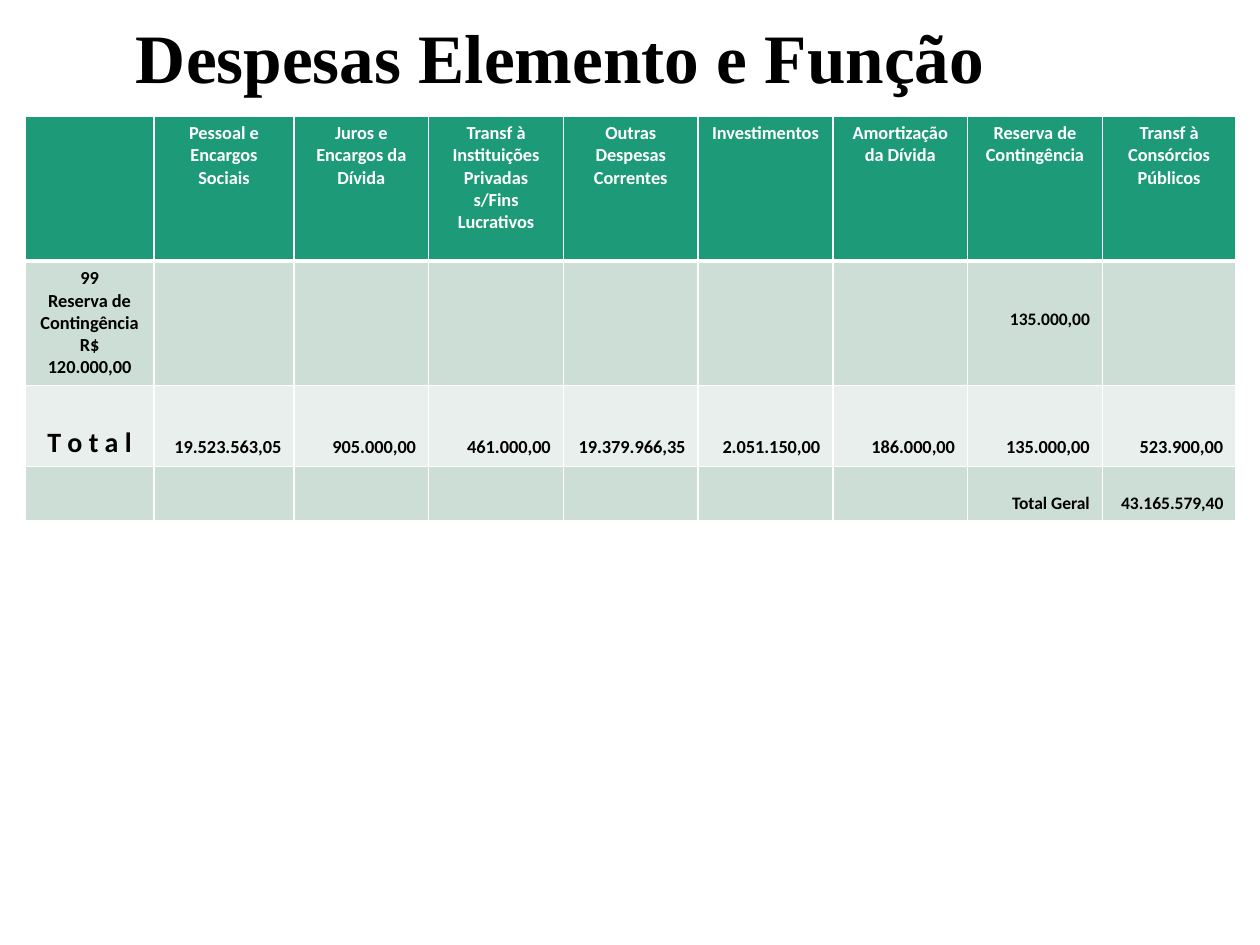
from dataclasses import dataclass

from lxml.etree import SubElement as Sub
from pptx import Presentation
from pptx.dml.color import RGBColor as RGB
from pptx.enum.text import MSO_ANCHOR as Anchor, PP_ALIGN as Align
from pptx.oxml.ns import qn
from pptx.util import Pt


@dataclass(frozen=True)
class Theme:
    green: str = "1D9A78"
    mid: str = "CDDED6"
    pale: str = "E8EFEC"
    white: str = "FFFFFF"
    black: str = "000000"
    serif: str = "Times New Roman"
    sans: str = "Calibri"
    title: float = 39.6
    total: float = 16
    body: float = 10.5
    small: float = 10


@dataclass(frozen=True)
class Row:
    height: float
    fill: str
    cells: list
    size: float = Theme.body
    lead: float = Theme.body
    ink: str = Theme.black
    align: Align = Align.RIGHT
    anchor: Anchor = Anchor.BOTTOM
    top: Anchor = Anchor.TOP
    foot: float = 3.6
    line: float = 1


THEME = Theme()
WIDTHS = [73.6, 80, 77, 77, 77, 77, 77, 77, 76.3]
ROWS = [
    Row(83, THEME.green,
        ["", "Pessoal e Encargos Sociais", "Juros e Encargos da Dívida",
         "Transf à Instituições Privadas s/Fins Lucrativos",
         "Outras Despesas Correntes", "Investimentos", "Amortização da Dívida",
         "Reserva de Contingência", "Transf à Consórcios Públicos"],
        ink=THEME.white, align=Align.CENTER, anchor=Anchor.TOP, line=3),
    Row(71.2, THEME.mid,
        ["99\nReserva de Contingência\nR$\n120.000,00", *[""] * 6, "135.000,00", ""],
        size=THEME.small, anchor=Anchor.MIDDLE, foot=8),
    Row(46.3, THEME.pale,
        ["T o t a l", "19.523.563,05", "905.000,00", "461.000,00", "19.379.966,35",
         "2.051.150,00", "186.000,00", "135.000,00", "523.900,00"],
        lead=THEME.total, top=Anchor.BOTTOM, foot=5),
    Row(31, THEME.mid, [*[""] * 7, "Total Geral", "43.165.579,40"], size=THEME.small),
]


def write(frame, text, size, font=THEME.sans, ink=THEME.black, align=Align.LEFT, space=None):
    frame.word_wrap = True
    for i, part in enumerate(text.split("\n")):
        para = frame.paragraphs[0] if i == 0 else frame.add_paragraph()
        para.alignment = align
        para.line_spacing = space
        run = para.add_run()
        run.text = part
        run.font.size, run.font.name, run.font.bold = Pt(size), font, True
        run.font.color.rgb = RGB.from_string(ink)


def edge(cell, sides):
    props = cell._tc.get_or_add_tcPr()
    for i, (side, width) in enumerate(sides.items()):
        line = Sub(props, qn(f"a:{side}"), w=str(Pt(width)))
        Sub(Sub(line, qn("a:solidFill")), qn("a:srgbClr"), val=THEME.white)
        props.remove(line)
        props.insert(i, line)


def add_title(slide, left, top, width, height):
    frame = slide.shapes.add_textbox(Pt(left), Pt(top), Pt(width), Pt(height)).text_frame
    frame.vertical_anchor = Anchor.MIDDLE
    write(frame, "Despesas Elemento e Função", THEME.title, font=THEME.serif, space=0.9)


def add_grid(slide, left, top):
    high = sum(row.height for row in ROWS)
    grid = slide.shapes.add_table(len(ROWS), len(WIDTHS), Pt(left), Pt(top),
                                  Pt(sum(WIDTHS)), Pt(high)).table
    for col, width in zip(grid.columns, WIDTHS):
        col.width = Pt(width)
    over = 1
    for r, row in enumerate(ROWS):
        grid.rows[r].height = Pt(row.height)
        for c, text in enumerate(row.cells):
            cell = grid.cell(r, c)
            cell.fill.solid()
            cell.fill.fore_color.rgb = RGB.from_string(row.fill)
            edge(cell, {"lnL": 1, "lnR": 1, "lnT": over, "lnB": row.line})
            if not text:
                continue
            cell.vertical_anchor = row.anchor if c else row.top
            if c:
                cell.margin_bottom = Pt(row.foot)
            write(cell.text_frame, text, row.size if c else row.lead, ink=row.ink,
                  align=row.align if c else Align.CENTER)
        over = row.line


def main():
    deck = Presentation()
    deck.slide_width, deck.slide_height = Pt(720), Pt(540)
    slide = deck.slides.add_slide(deck.slide_layouts[6])
    add_title(slide, 70.6, 15, 620.6, 39.6)
    add_grid(slide, 14.4, 66.2)
    deck.save("out.pptx")


if __name__ == "__main__":
    main()
